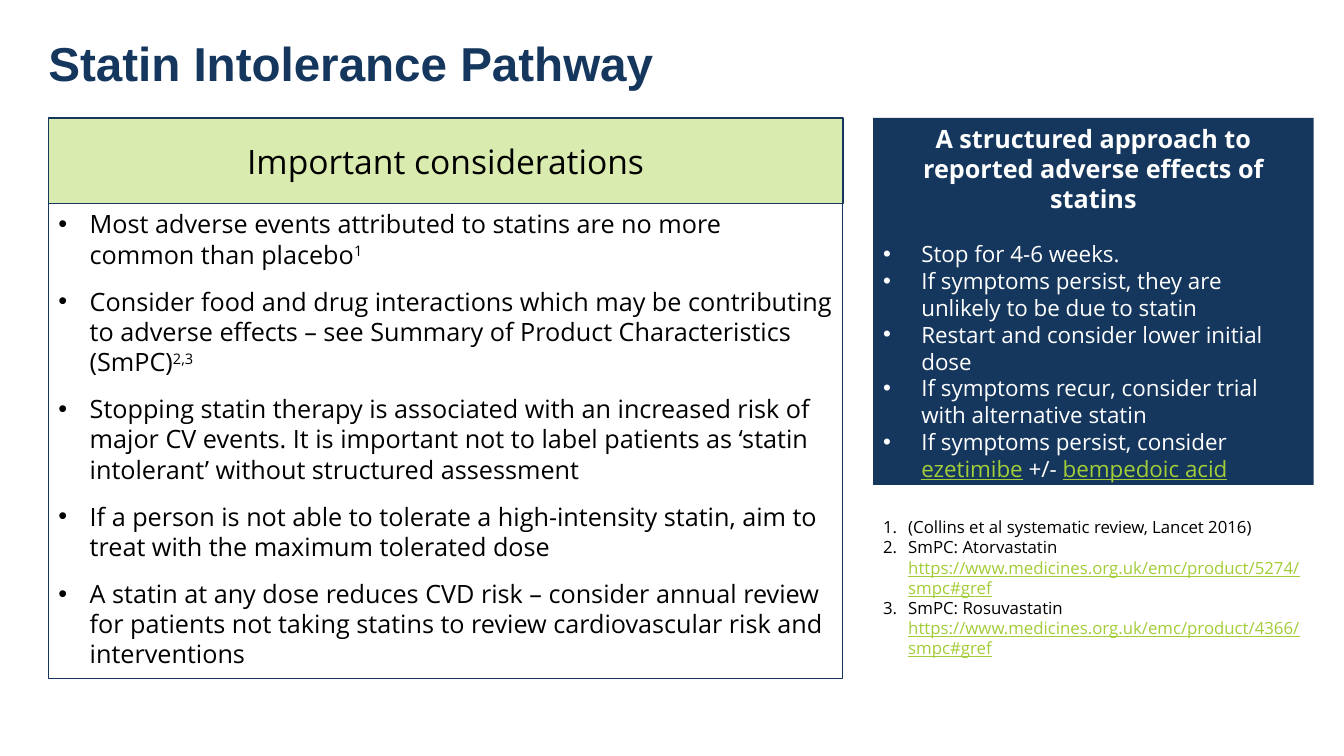
from lxml.etree import SubElement
from pptx import Presentation
from pptx.dml.color import RGBColor
from pptx.enum.shapes import MSO_SHAPE as SHAPE
from pptx.enum.text import MSO_ANCHOR as ANCHOR, MSO_AUTO_SIZE as FIT, PP_ALIGN as ALIGN
from pptx.oxml.ns import qn
from pptx.util import Inches, Pt

NAVY, GREEN, WHITE, BLACK = "15375E", "A3CD38", "FFFFFF", "000000"
BODY_FONT = "Open Sans"

# Each paragraph is a list of (text, style) runs; style is "", "sup" or "link".
TITLE = "Statin Intolerance Pathway"
HEADING = "Important considerations"
CONSIDERATIONS = [
    [("Most adverse events attributed to statins are no more common than placebo", ""),
     ("1", "sup")],
    [("Consider food and drug interactions which may be contributing to adverse effects "
      "– see Summary of Product Characteristics (SmPC)", ""), ("2,3", "sup")],
    [("Stopping statin therapy is associated with an increased risk of major CV events. "
      "It is important not to label patients as ‘statin intolerant’ without structured "
      "assessment", "")],
    [("If a person is not able to tolerate a high-intensity statin, aim to treat with "
      "the maximum tolerated dose", "")],
    [("A statin at any dose reduces CVD risk – consider annual review for patients not "
      "taking statins to review cardiovascular risk and interventions", "")],
]
APPROACH_HEADING = "A structured approach to reported adverse effects of statins"
APPROACH = [
    [("Stop for 4-6 weeks.", "")],
    [("If symptoms persist, they are unlikely to be due to statin", "")],
    [("Restart and consider lower initial dose", "")],
    [("If symptoms recur, consider trial with alternative statin", "")],
    [("If symptoms persist, consider ", ""), ("ezetimibe", "link"), (" +/- ", ""),
     ("bempedoic acid", "link")],
]
REFERENCES = [
    [("(Collins et al systematic review, Lancet 2016)", "")],
    [("SmPC: Atorvastatin ", ""),
     ("https://www.medicines.org.uk/emc/product/5274/smpc#gref", "link")],
    [("SmPC: Rosuvastatin ", ""),
     ("https://www.medicines.org.uk/emc/product/4366/smpc#gref", "link")],
]

LEFT, TOP, LEFT_W, HEADING_H, LIST_H = 0.48, 1.17, 7.88, 0.85, 4.71
RIGHT, RIGHT_W, APPROACH_H = 8.66, 4.37, 3.64
REFERENCES_TOP, REFERENCES_H = 5.08, 1.68


def rgb(color):
    return RGBColor.from_string(color)


def place(sp, left, top, width, height):
    sp.left, sp.top, sp.width, sp.height = map(Inches, (left, top, width, height))


def add_box(slide, *box):
    sp = slide.shapes.add_shape(SHAPE.RECTANGLE, *map(Inches, box))
    sp.shadow.inherit = False
    return sp


def set_line(sp, width):
    sp.line.color.rgb = rgb(NAVY)
    sp.line.width = Pt(width)


def add_run(p, text, size, color, font=BODY_FONT, bold=False, style=""):
    r = p.add_run()
    r.text = text
    r.font.size, r.font.name, r.font.bold = Pt(size), font, bold
    r.font.color.rgb = rgb(GREEN if style == "link" else color)
    if style == "link":
        r.font.underline = True
    elif style == "sup":
        r.font._element.set("baseline", "30000")


def add_list(tf, items, size, color, indent, gap=0, first_gap=0, numbered=False):
    """Fill tf with bulleted or numbered items, after any text it already has."""
    for i, runs in enumerate(items):
        p = tf.add_paragraph() if i or tf.text else tf.paragraphs[0]
        p.alignment = ALIGN.LEFT
        p.space_before = Pt(gap if i else first_gap)
        pPr = p._p.get_or_add_pPr()
        pPr.set("marL", str(Inches(indent)))
        pPr.set("indent", str(-Inches(indent)))
        if numbered:
            SubElement(pPr, qn("a:buFont"), typeface="+mj-lt")
            SubElement(pPr, qn("a:buAutoNum"), type="arabicPeriod")
        else:
            SubElement(pPr, qn("a:buFont"), typeface="Arial")
            SubElement(pPr, qn("a:buChar"), char="•")
        for text, style in runs:
            add_run(p, text, size, color, style=style)


prs = Presentation()
prs.slide_width, prs.slide_height = Inches(13.33), Inches(7.5)
slide = prs.slides.add_slide(prs.slide_layouts[1])

# Title
title = slide.shapes.title
place(title, LEFT, 0.42, 12.36, 0.48)
tf = title.text_frame
tf.auto_size = FIT.NONE
tf.margin_left = tf.margin_right = tf.margin_top = tf.margin_bottom = 0
p = tf.paragraphs[0]
p.alignment, p.line_spacing = ALIGN.LEFT, 0.9
add_run(p, TITLE, 34, NAVY, font="Arial", bold=True)

# Considerations: tinted heading above the outlined list
heading = add_box(slide, LEFT, TOP, LEFT_W, HEADING_H)
heading.fill.solid()
heading.fill.fore_color.rgb = rgb(GREEN)
tint = heading._element.spPr.find(qn("a:solidFill")).find(qn("a:srgbClr"))
SubElement(tint, qn("a:alpha"), val="40000")
set_line(heading, 1)
tf = heading.text_frame
tf.word_wrap, tf.vertical_anchor = True, ANCHOR.MIDDLE
tf.paragraphs[0].alignment = ALIGN.CENTER
add_run(tf.paragraphs[0], HEADING, 24, BLACK)

body = slide.placeholders[1]
place(body, LEFT, TOP + HEADING_H, LEFT_W, LIST_H)
set_line(body, 0.75)
body.text_frame.auto_size = FIT.NONE
add_list(body.text_frame, CONSIDERATIONS, 18, BLACK, 0.31, gap=12)

# Structured approach
approach = add_box(slide, RIGHT, TOP, RIGHT_W, APPROACH_H)
approach.fill.solid()
approach.fill.fore_color.rgb = rgb(NAVY)
approach.line.fill.background()
tf = approach.text_frame
tf.word_wrap, tf.vertical_anchor = True, ANCHOR.TOP
tf.paragraphs[0].alignment = ALIGN.CENTER
add_run(tf.paragraphs[0], APPROACH_HEADING, 18, WHITE, bold=True)
add_list(tf, APPROACH, 16, WHITE, 0.38, first_gap=19)

# References
references = slide.shapes.add_textbox(
    *map(Inches, (RIGHT, REFERENCES_TOP, RIGHT_W, REFERENCES_H)))
references.text_frame.word_wrap = True
add_list(references.text_frame, REFERENCES, 12, BLACK, 0.25, numbered=True)

prs.save("out.pptx")
